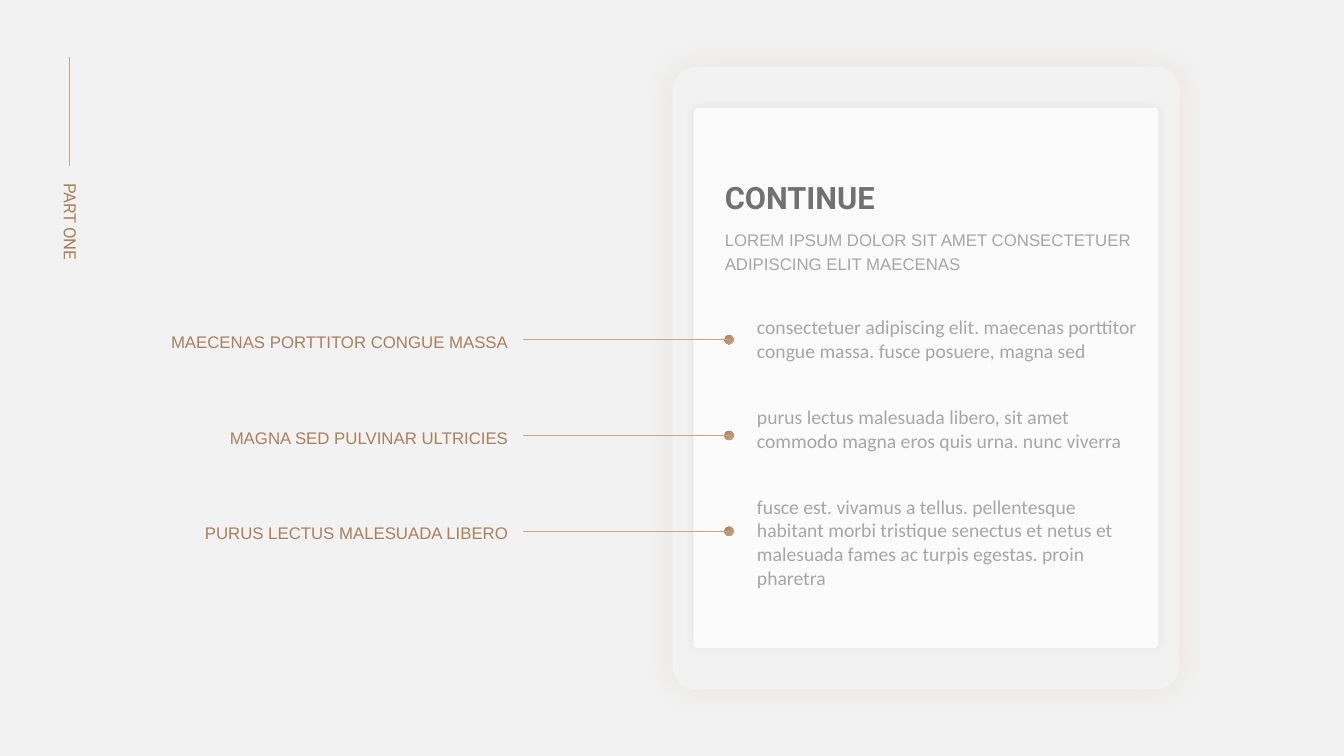
from lxml import etree
from pptx import Presentation
from pptx.dml.color import RGBColor
from pptx.enum.shapes import MSO_CONNECTOR, MSO_SHAPE
from pptx.enum.text import MSO_AUTO_SIZE, PP_ALIGN
from pptx.oxml.ns import qn
from pptx.util import Inches, Pt

RECTANGLE = MSO_SHAPE.RECTANGLE
ROUNDED = MSO_SHAPE.ROUNDED_RECTANGLE
OVAL = MSO_SHAPE.OVAL
STRAIGHT = MSO_CONNECTOR.STRAIGHT
GROW = MSO_AUTO_SIZE.SHAPE_TO_FIT_TEXT
LEFT, RIGHT = PP_ALIGN.LEFT, PP_ALIGN.RIGHT

SLIDE_WIDTH, SLIDE_HEIGHT = 13.33, 7.5
BLANK_LAYOUT = 6

PALE_GRAY = RGBColor(0xF2, 0xF2, 0xF2)
PAPER = RGBColor(0xFB, 0xFB, 0xFB)
HEADING_GRAY = RGBColor(0x71, 0x71, 0x71)
TEXT_GRAY = RGBColor(0xA6, 0xA6, 0xA6)
BRONZE = RGBColor(0xAA, 0x80, 0x5C)
LIGHT_BRONZE = RGBColor(0xCD, 0xA5, 0x82)
BLACK = RGBColor(0, 0, 0)

CALLOUTS = [
    "MAECENAS PORTTITOR CONGUE MASSA",
    "MAGNA SED PULVINAR ULTRICIES",
    "PURUS LECTUS MALESUADA LIBERO",
]
DESCRIPTIONS = [
    ("consectetuer adipiscing elit. maecenas porttitor congue massa. "
     "fusce posuere, magna sed", 0.57),
    ("purus lectus malesuada libero, sit amet commodo magna eros quis urna. "
     "nunc viverra", 0.57),
    ("fusce est. vivamus a tellus. pellentesque habitant morbi tristique "
     "senectus et netus et malesuada fames ac turpis egestas. proin pharetra", 0.81),
]


def fill_bronze(fill, clockwise_angle):
    fill.gradient()
    fill.gradient_angle = 360 - clockwise_angle
    for stop, color in zip(fill.gradient_stops, (BRONZE, LIGHT_BRONZE)):
        stop.color.rgb = color


def add_plain_shape(slide, kind, box, color=None):
    """Add a shape without outline or shadow; no color means the bronze gradient."""
    shape = slide.shapes.add_shape(kind, *map(Inches, box))
    shape.shadow.inherit = False
    shape.line.fill.background()
    if color is None:
        fill_bronze(shape.fill, 45)
    else:
        shape.fill.solid()
        shape.fill.fore_color.rgb = color
    return shape


def add_glow_panel(slide, box, color, corner, glow_color, opacity, blur):
    """Add a rounded panel with a soft shadow; opacity in percent, blur in points."""
    panel = add_plain_shape(slide, ROUNDED, box, color)
    panel.adjustments[0] = corner
    effects = panel._element.spPr.find(qn("a:effectLst"))
    shadow = etree.SubElement(effects, qn("a:outerShdw"), blurRad=str(Pt(blur)),
                              dist="0", dir="0", algn="ctr", rotWithShape="0")
    shadow_color = etree.SubElement(shadow, qn("a:srgbClr"), val=str(glow_color))
    etree.SubElement(shadow_color, qn("a:alpha"), val=str(opacity * 1000))


def add_bronze_line(slide, start, end):
    line = slide.shapes.add_connector(STRAIGHT, *map(Inches, start + end))
    line.line.color.rgb = LIGHT_BRONZE
    line.line.width = Pt(0.5)
    etree.SubElement(line._element.spPr, qn("a:effectLst"))


def add_text(slide, box, text, font_name, size, color=None, bold=False,
             align=LEFT, spacing=None, angle=45):
    """Add one paragraph; no color means the bronze gradient at the given angle."""
    text_box = slide.shapes.add_textbox(*map(Inches, box))
    frame = text_box.text_frame
    frame.word_wrap = True
    frame.auto_size = GROW
    paragraph = frame.paragraphs[0]
    paragraph.alignment = align
    paragraph.line_spacing = spacing
    run = paragraph.add_run()
    run.text = text
    run.font.name = font_name
    run.font.size = Pt(size)
    run.font.bold = bold
    if color is None:
        fill_bronze(run.font.fill, angle)
    else:
        run.font.color.rgb = color
    return text_box


def add_part_marker(slide, left, top):
    add_bronze_line(slide, (left, top), (left, top + 1.08))
    label = add_text(slide, (left - 0.61, top + 1.62, 1.24, 0.3),
                     "PART ONE", "Roboto", 12, angle=90)
    label.rotation = 90


def add_tablet(slide, left, top, width, height):
    add_glow_panel(slide, (left, top, width, height), PALE_GRAY, 0.047,
                   LIGHT_BRONZE, 20, 20)
    add_glow_panel(slide, (left + 0.21, top + 0.41, width - 0.42, height - 0.82),
                   PAPER, 0.009, BLACK, 5, 7)
    add_text(slide, (left + 0.42, top + 1.06, 1.8, 0.47),
             "CONTINUE", "Roboto", 22, HEADING_GRAY, bold=True)
    add_text(slide, (left + 0.42, top + 1.53, 4.61, 0.56),
             "LOREM IPSUM DOLOR SIT AMET CONSECTETUER ADIPISCING ELIT MAECENAS",
             "Arial", 12, TEXT_GRAY, spacing=1.2)
    for row, (description, text_height) in enumerate(DESCRIPTIONS):
        add_text(slide, (left + 0.74, top + 2.42 + 0.89 * row, 4.06, text_height),
                 description, "Calibri", 14, TEXT_GRAY)


def add_callout(slide, left, top, label):
    """Add a right-aligned label with a line that ends in a dot on the tablet."""
    dot_size = 0.09
    line_y = top + 0.17
    dot_x = left + 5.64
    add_plain_shape(slide, OVAL, (dot_x - dot_size / 2, line_y - dot_size / 2,
                                  dot_size, dot_size))
    add_bronze_line(slide, (left + 3.6, line_y), (dot_x, line_y))
    add_text(slide, (left, top, 3.55, 0.32), label, "Arial", 12,
             align=RIGHT, spacing=1.2)


def main():
    presentation = Presentation()
    presentation.slide_width = Inches(SLIDE_WIDTH)
    presentation.slide_height = Inches(SLIDE_HEIGHT)
    slide = presentation.slides.add_slide(presentation.slide_layouts[BLANK_LAYOUT])
    add_plain_shape(slide, RECTANGLE, (0, 0, SLIDE_WIDTH, SLIDE_HEIGHT), PALE_GRAY)
    add_part_marker(slide, 0.69, 0.57)
    add_tablet(slide, 6.67, 0.66, 5.03, 6.18)
    for row, label in enumerate(CALLOUTS):
        add_callout(slide, 1.59, 3.2 + 0.95 * row, label)
    presentation.save("out.pptx")


if __name__ == "__main__":
    main()
